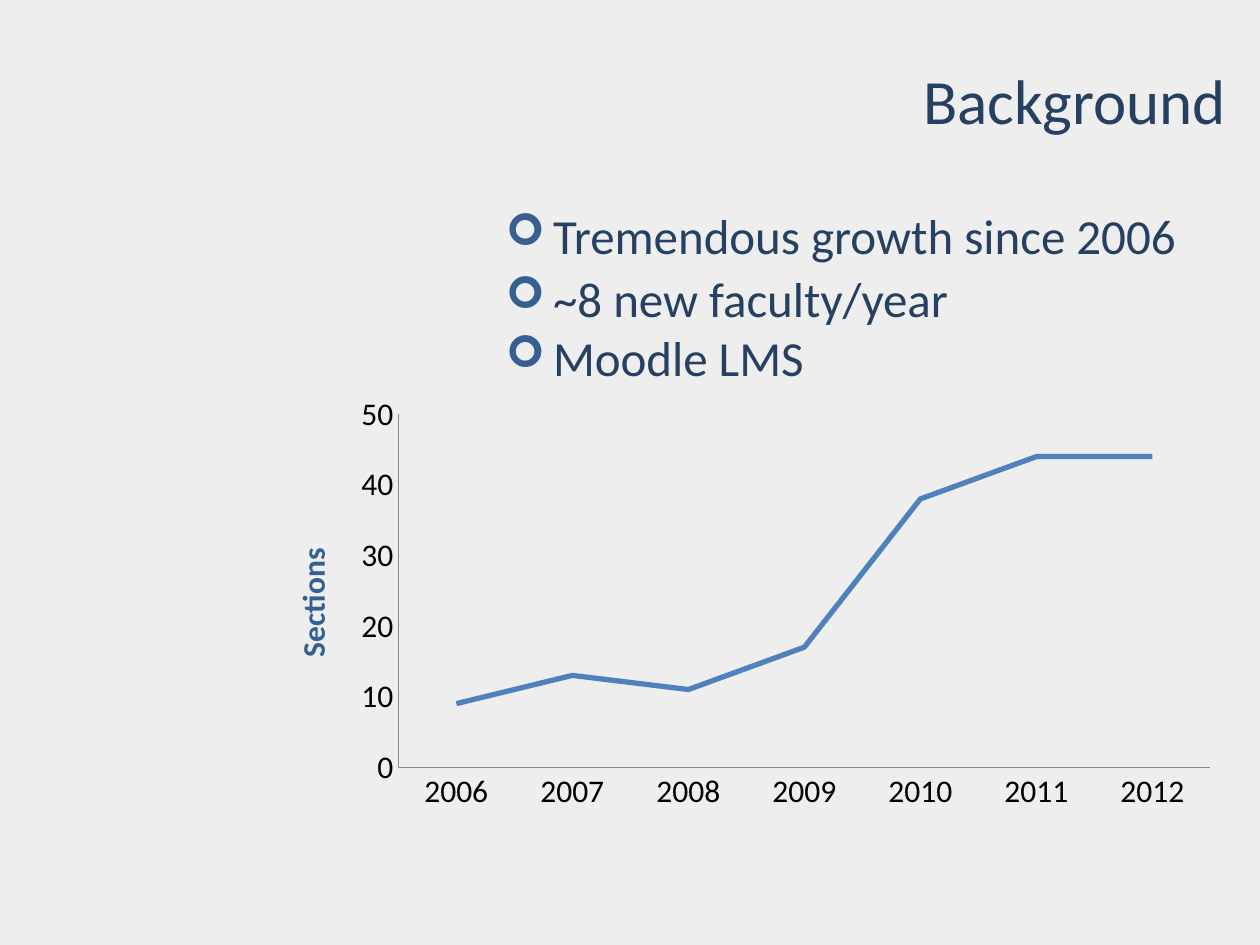
from lxml import etree
from pptx import Presentation
from pptx.chart.data import CategoryChartData
from pptx.dml.color import RGBColor
from pptx.enum.chart import XL_CHART_TYPE as ChartType, XL_TICK_MARK as TickMark
from pptx.enum.text import MSO_ANCHOR as Anchor, PP_ALIGN as Align
from pptx.oxml import parse_xml
from pptx.oxml.ns import nsdecls, qn
from pptx.util import Cm, Pt

FONT = "Calibri"
NAVY, BLUE, LINE_BLUE = "254061", "376092", "4F81BD"
AXIS_GREY, BLACK, BACKDROP = "878787", "000000", "EEEEEE"
BULLET_INDENT = Cm(0.95)


def color(hex_code):
    return RGBColor.from_string(hex_code)


def style_font(font, size, hex_code, bold=False):
    font.name = FONT
    font.size = Pt(size)
    font.bold = bold
    font.color.rgb = color(hex_code)


def add_text_frame(slide, left, top, width, height, anchor=Anchor.TOP):
    frame = slide.shapes.add_textbox(Cm(left), Cm(top), Cm(width), Cm(height)).text_frame
    frame.word_wrap = True
    frame.vertical_anchor = anchor
    return frame


def add_run(paragraph, text, size):
    run = paragraph.add_run()
    run.text = text
    style_font(run.font, size, NAVY)


def add_title(slide, text):
    frame = add_text_frame(slide, 6.55, 0.64, 18.42, 2.74, Anchor.MIDDLE)
    heading = frame.paragraphs[0]
    heading.alignment = Align.RIGHT
    add_run(heading, text, 36)


def set_arrow_bullet(paragraph):
    props = paragraph._p.get_or_add_pPr()
    props.set("marL", str(BULLET_INDENT))
    props.set("indent", str(-BULLET_INDENT))
    bullet_color = etree.SubElement(props, qn("a:buClr"))
    etree.SubElement(bullet_color, qn("a:srgbClr"), val=BLUE)
    etree.SubElement(props, qn("a:buSzPct"), val="90000")
    etree.SubElement(props, qn("a:buFont"), typeface="Wingdings")
    etree.SubElement(props, qn("a:buChar"), char="➢")


def add_bullets(slide, top, points):
    frame = add_text_frame(slide, 9.95, top, 17.15, 12.9)
    for index, point in enumerate(points):
        paragraph = frame.add_paragraph() if index else frame.paragraphs[0]
        set_arrow_bullet(paragraph)
        add_run(paragraph, point, 28)


def style_axis(axis):
    axis.has_major_gridlines = False
    axis.major_tick_mark = axis.minor_tick_mark = TickMark.NONE
    axis.format.line.color.rgb = color(AXIS_GREY)
    axis.format.line.width = Pt(0.75)
    style_font(axis.tick_labels.font, 18, BLACK)


def set_plot_layout(chart, x, y, width, height):
    plot_area = chart._chartSpace.chart.plotArea
    for old_layout in plot_area.findall(qn("c:layout")):
        plot_area.remove(old_layout)
    plot_area.insert(0, parse_xml(
        f'<c:layout {nsdecls("c")}><c:manualLayout><c:layoutTarget val="inner"/>'
        '<c:xMode val="edge"/><c:yMode val="edge"/>'
        f'<c:x val="{x}"/><c:y val="{y}"/><c:w val="{width}"/><c:h val="{height}"/>'
        '</c:manualLayout></c:layout>'))


def add_sections_chart(slide):
    growth = CategoryChartData()
    growth.categories = [str(year) for year in range(2006, 2013)]
    growth.add_series("Series 1", (9, 13, 11, 17, 38, 44, 44))
    chart = slide.shapes.add_chart(
        ChartType.LINE, Cm(5.72), Cm(7.83), Cm(19.26), Cm(8.68), growth).chart
    chart.has_legend = chart.has_title = False
    style_font(chart.font, 18, BLACK)
    set_plot_layout(chart, 0.12, 0.06, 0.85, 0.82)

    # Axes
    style_axis(chart.category_axis)
    sections_axis = chart.value_axis
    style_axis(sections_axis)
    sections_axis.minimum_scale, sections_axis.maximum_scale = 0, 50
    sections_axis.major_unit = 10
    axis_label = sections_axis.axis_title.text_frame.paragraphs[0].add_run()
    axis_label.text = "Sections"
    style_font(axis_label.font, 18, BLUE, bold=True)

    # Growth line
    chart.plots[0].vary_by_categories = False
    growth_line = chart.plots[0].series[0]
    growth_line.smooth = False
    growth_line.format.line.color.rgb = color(LINE_BLUE)
    growth_line.format.line.width = Pt(3)


def main():
    prs = Presentation()
    prs.slide_width, prs.slide_height = Cm(25.4), Cm(19.05)
    slide = prs.slides.add_slide(prs.slide_layouts[6])
    slide.background.fill.solid()
    slide.background.fill.fore_color.rgb = color(BACKDROP)

    add_title(slide, "Background")
    add_bullets(slide, 4.02, ["Tremendous growth since 2006"])
    add_sections_chart(slide)
    add_bullets(slide, 5.29, ["~8 new faculty/year", "Moodle LMS"])

    prs.save("out.pptx")


if __name__ == "__main__":
    main()
